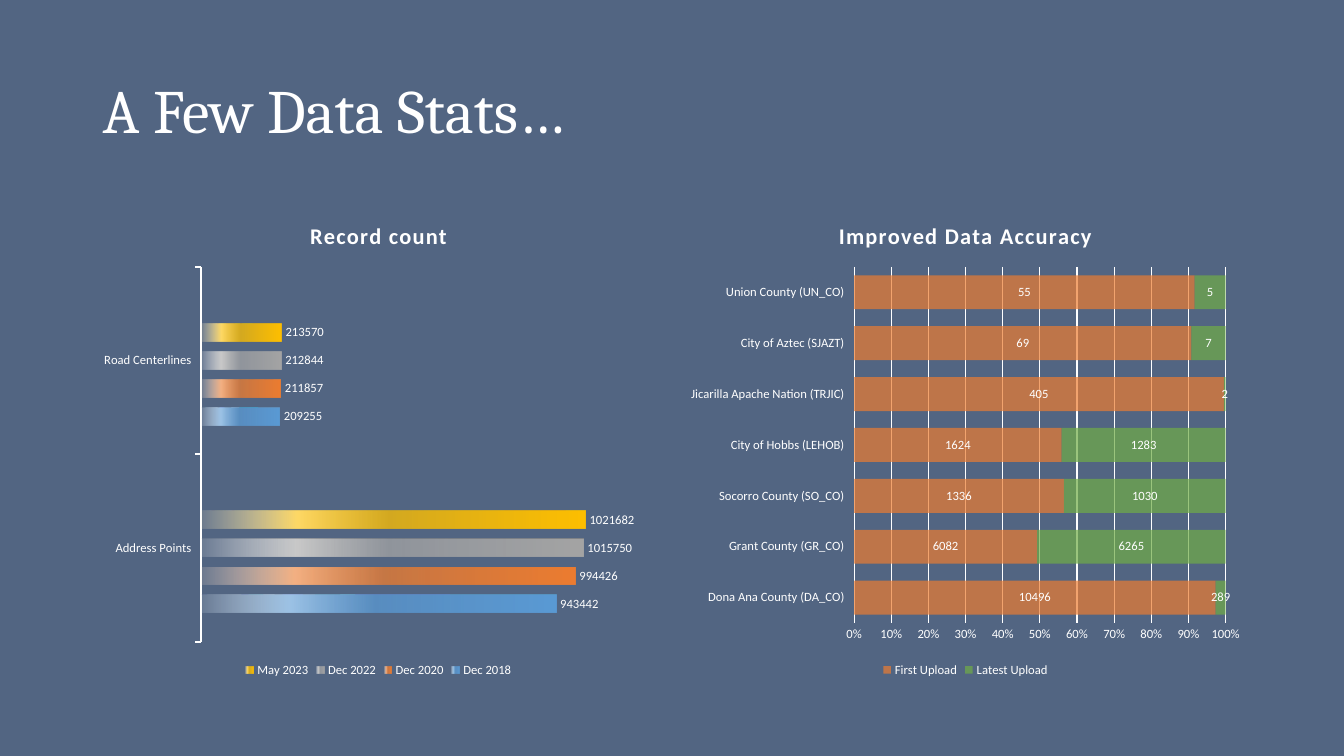
from lxml import etree
from pptx import Presentation
from pptx.chart.data import CategoryChartData
from pptx.dml.color import RGBColor
from pptx.enum.chart import (XL_CHART_TYPE, XL_LABEL_POSITION,
                             XL_LEGEND_POSITION, XL_TICK_LABEL_POSITION,
                             XL_TICK_MARK)
from pptx.enum.text import MSO_ANCHOR
from pptx.oxml import parse_xml
from pptx.oxml.ns import nsdecls, qn
from pptx.util import Pt

BAR, STACK = XL_CHART_TYPE.BAR_CLUSTERED, XL_CHART_TYPE.BAR_STACKED_100
END, MID = XL_LABEL_POSITION.OUTSIDE_END, XL_LABEL_POSITION.CENTER
BOTTOM = XL_LEGEND_POSITION.BOTTOM
LOW = XL_TICK_LABEL_POSITION.LOW
NONE, OUT = XL_TICK_MARK.NONE, XL_TICK_MARK.OUTSIDE

# Content
TITLE = "A Few Data Stats…"
WHITE, BACK = "FFFFFF", "526582"

COUNT = {
    "title": "Record count",
    "cats": ["Address Points", "Road Centerlines"],
    # name, values, base, light and pale colour
    "rows": [
        ("Dec 2018", (943442, 209255), ("5B9BD5", "9DC3E6", "DEEBF7")),
        ("Dec 2020", (994426, 211857), ("ED7D31", "F4B183", "FBE5D6")),
        ("Dec 2022", (1015750, 212844), ("A5A5A5", "C9C9C9", "EDEDED")),
        ("May 2023", (1021682, 213570), ("FFC000", "FFD966", "FFF2CC")),
        ("", (None, None), ("4472C4", "8FAADC", "DAE3F3")),
    ],
}
GAIN = {
    "title": "Improved Data Accuracy",
    "cats": ["Dona Ana County (DA_CO)", "Grant County (GR_CO)",
             "Socorro County (SO_CO)", "City of Hobbs (LEHOB)",
             "Jicarilla Apache Nation (TRJIC)", "City of Aztec (SJAZT)",
             "Union County (UN_CO)"],
    "rows": [
        ("First Upload", (10496, 6082, 1336, 1624, 405, 69, 55), "ED7D31"),
        ("Latest Upload", (289, 6265, 1030, 1283, 2, 7, 5), "70AD47"),
    ],
}

# Layout
WIDE, HIGH = 960, 540
LEFT, TOP = 66.24, 144
CW, CH = 408.24, 342.72
RIGHT = WIDE - LEFT - CW


def color(code):
    return RGBColor.from_string(code)


def style(font, size, face="Calibri"):
    font.size = Pt(size)
    font.name = face
    font.color.rgb = color(WHITE)


def stroke(line, width):
    line.color.rgb = color(WHITE)
    line.width = Pt(width)


def tint(code, alpha):
    return (f'<a:srgbClr val="{code}"><a:alpha val="{alpha * 1000}"/>'
            '</a:srgbClr>')


def paint(row, xml):
    """Put a fill, given as XML, on one series."""
    row.format.fill.background()
    props = row._element.find(qn("c:spPr"))
    props.replace(props.find(qn("a:noFill")), parse_xml(xml))


def fade(base, light, pale):
    stops = [(0, base, 100), (51, base, 75), (75, light, 100), (100, pale, 15)]
    marks = "".join(f'<a:gs pos="{pos * 1000}">{tint(code, alpha)}</a:gs>'
                    for pos, code, alpha in stops)
    return (f'<a:gradFill {nsdecls("a")}><a:gsLst>{marks}</a:gsLst>'
            f'<a:lin ang="{180 * 60000}" scaled="0"/></a:gradFill>')


def sheer(code):
    return f'<a:solidFill {nsdecls("a")}>{tint(code, 70)}</a:solidFill>'


def draw(slide, data, kind, left, gap, lap, spot, fill):
    """Add a bar chart with the look that both charts share."""
    table = CategoryChartData()
    table.categories = data["cats"]
    for name, vals, _ in data["rows"]:
        table.add_series(name, vals)
    chart = slide.shapes.add_chart(kind, Pt(left), Pt(TOP), Pt(CW), Pt(CH),
                                   table).chart
    style(chart.font, 10)

    chart.has_title = True
    run = chart.chart_title.text_frame.paragraphs[0].add_run()
    run.text = data["title"]
    style(run.font, 16)
    run.font.bold = True
    run.font._element.set("spc", "100")
    chart.chart_title.include_in_layout = False

    chart.has_legend = True
    chart.legend.position = BOTTOM
    chart.legend.include_in_layout = False
    style(chart.legend.font, 9)

    plot = chart.plots[0]
    plot.vary_by_categories = False
    plot.gap_width, plot.overlap = gap, lap
    for row, (_, _, hue) in zip(plot.series, data["rows"]):
        paint(row, fill(hue))
        labels = row.data_labels
        labels.show_value = True
        labels.position = spot
        style(labels.font, 9)

    style(chart.category_axis.tick_labels.font, 9)
    return chart


# Slide and title
deck = Presentation()
deck.slide_width, deck.slide_height = Pt(WIDE), Pt(HIGH)
slide = deck.slides.add_slide(deck.slide_layouts[6])
slide.background.fill.solid()
slide.background.fill.fore_color.rgb = color(BACK)

frame = slide.shapes.add_textbox(Pt(LEFT), Pt(28.8), Pt(WIDE - 2 * LEFT),
                                 Pt(104.4)).text_frame
frame.word_wrap = True
frame.vertical_anchor = MSO_ANCHOR.MIDDLE
para = frame.paragraphs[0]
para.line_spacing = 0.9
run = para.add_run()
run.text = TITLE
style(run.font, 44, "Cambria")

# Record count: hidden value axis, unnamed row kept out of the legend
chart = draw(slide, COUNT, BAR, LEFT, 326, -58, END, lambda hue: fade(*hue))
axis = chart.category_axis
axis.major_tick_mark = OUT
stroke(axis.format.line, 1.5)
chart.value_axis.visible = False
chart.value_axis.has_major_gridlines = False
entry = etree.Element(qn("c:legendEntry"))
etree.SubElement(entry, qn("c:idx")).set("val", "0")
etree.SubElement(entry, qn("c:delete")).set("val", "1")
chart.legend._element.find(qn("c:legendPos")).addnext(entry)

# Data accuracy: percent axis with grid
chart = draw(slide, GAIN, STACK, RIGHT, 50, 100, MID, sheer)
axis = chart.category_axis
axis.major_tick_mark = NONE
axis.tick_label_position = LOW
stroke(axis.format.line, 0.75)
axis = chart.value_axis
axis.major_tick_mark = NONE
axis.format.line.fill.background()
stroke(axis.major_gridlines.format.line, 0.75)
style(axis.tick_labels.font, 9)
axis.tick_labels.number_format = "0%"
axis.tick_labels.number_format_is_linked = False

deck.save("out.pptx")
